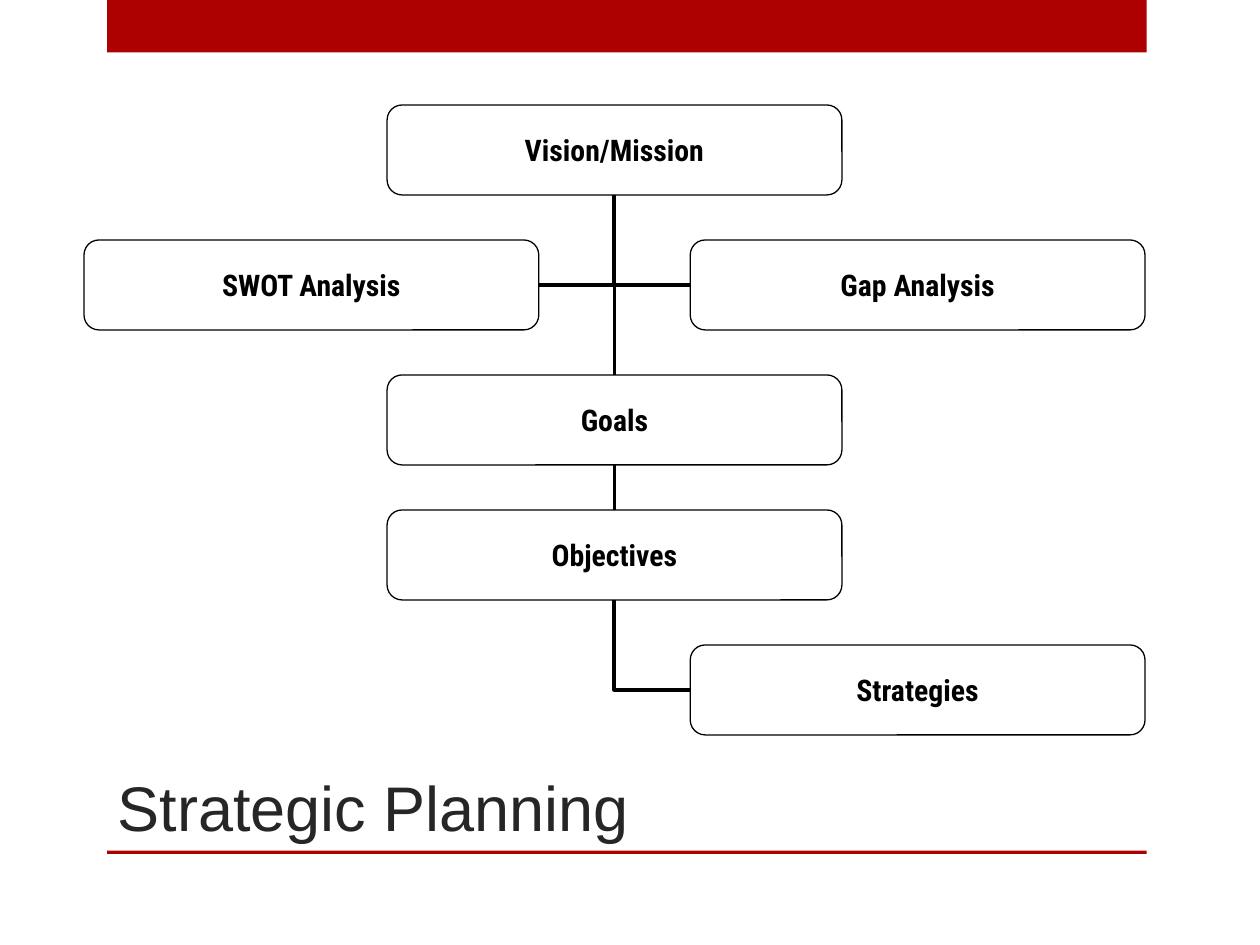
from dataclasses import dataclass

from pptx import Presentation
from pptx.dml.color import RGBColor
from pptx.enum.shapes import MSO_CONNECTOR, MSO_SHAPE
from pptx.enum.text import MSO_ANCHOR, MSO_AUTO_SIZE, PP_ALIGN
from pptx.oxml.ns import qn
from pptx.util import Pt


@dataclass(frozen=True)
class Theme:
    accent: RGBColor = RGBColor(0xAD, 0x01, 0x01)
    title: RGBColor = RGBColor(0x26, 0x26, 0x26)
    ink: RGBColor = RGBColor(0, 0, 0)
    paper: RGBColor = RGBColor(0xFF, 0xFF, 0xFF)
    title_font: str = "Arial"
    box_font: str = "Roboto Condensed"
    title_size: float = 36
    box_size: float = 17
    box_line: float = 0.75
    link_line: float = 2.25


# Connection sites of a rectangle
TOP, LEFT, BOTTOM, RIGHT = range(4)

# Chart grid: columns overlap by half a box, rows are evenly spaced
GRID_LEFT, GRID_TOP = 48, 60
COL_STEP, ROW_STEP = 173.2, 77.14
BOX_W, BOX_H = 259.9, 51.43

BAR_LEFT, BAR_W = 61.2, 594

# name: (column, row)
BOXES = {
    "Vision/Mission": (1, 0),
    "Goals": (1, 2),
    "Objectives": (1, 3),
    "Strategies": (2, 4),
    "SWOT Analysis": (0, 1),
    "Gap Analysis": (2, 1),
}

# (from, site, to, site)
LINKS = [
    ("Gap Analysis", LEFT, "Vision/Mission", BOTTOM),
    ("SWOT Analysis", RIGHT, "Vision/Mission", BOTTOM),
    ("Strategies", LEFT, "Objectives", BOTTOM),
    ("Objectives", TOP, "Goals", BOTTOM),
    ("Goals", TOP, "Vision/Mission", BOTTOM),
]


class SlideBuilder:
    def __init__(self, slide, theme):
        self.slide = slide
        self.theme = theme

    def format_runs(self, p, font, size, color, bold=False):
        for r in p.runs:
            r.font.name = font
            r.font.size = Pt(size)
            r.font.color.rgb = color
            r.font.bold = bold

    def bar(self, top, height):
        sp = self.slide.shapes.add_shape(
            MSO_SHAPE.RECTANGLE, Pt(BAR_LEFT), Pt(top), Pt(BAR_W), Pt(height))
        sp.shadow.inherit = False
        sp.fill.solid()
        sp.fill.fore_color.rgb = self.theme.accent
        sp.line.fill.background()

    def title(self, text):
        sp = self.slide.shapes.title
        sp.left, sp.top, sp.width, sp.height = Pt(60), Pt(432), Pt(BAR_W), Pt(54)
        tf = sp.text_frame
        tf.text = text
        tf.auto_size = MSO_AUTO_SIZE.NONE
        tf.vertical_anchor = MSO_ANCHOR.BOTTOM
        p = tf.paragraphs[0]
        p.alignment = PP_ALIGN.LEFT
        self.format_runs(p, self.theme.title_font, self.theme.title_size,
                         self.theme.title)

    def box(self, text, col, row):
        sp = self.slide.shapes.add_shape(
            MSO_SHAPE.ROUNDED_RECTANGLE,
            Pt(GRID_LEFT + col * COL_STEP), Pt(GRID_TOP + row * ROW_STEP),
            Pt(BOX_W), Pt(BOX_H))
        sp.shadow.inherit = False
        sp.fill.solid()
        sp.fill.fore_color.rgb = self.theme.paper
        sp.line.color.rgb = self.theme.ink
        sp.line.width = Pt(self.theme.box_line)
        tf = sp.text_frame
        tf.text = text
        tf.word_wrap = False
        tf.vertical_anchor = MSO_ANCHOR.MIDDLE
        tf.margin_left = tf.margin_top = tf.margin_right = tf.margin_bottom = 0
        p = tf.paragraphs[0]
        p.alignment = PP_ALIGN.CENTER
        self.format_runs(p, self.theme.box_font, self.theme.box_size,
                         self.theme.ink, bold=True)
        return sp

    def link(self, start, start_site, end, end_site):
        """Join two boxes: straight from a top, with one bend from a side."""
        bent = start_site in (LEFT, RIGHT)
        kind = MSO_CONNECTOR.ELBOW if bent else MSO_CONNECTOR.STRAIGHT
        cn = self.slide.shapes.add_connector(kind, 0, 0, 0, 0)
        cn.begin_connect(start, start_site)
        cn.end_connect(end, end_site)
        cn.line.color.rgb = self.theme.ink
        cn.line.width = Pt(self.theme.link_line)
        sp_pr = cn._element.spPr
        if bent:
            sp_pr.find(qn("a:prstGeom")).set("prst", "bentConnector2")
        sp_pr.append(sp_pr.makeelement(qn("a:effectLst"), {}))


def main():
    prs = Presentation()
    prs.slide_width, prs.slide_height = Pt(720), Pt(540)
    title_only = prs.slide_layouts[5]
    s = SlideBuilder(prs.slides.add_slide(title_only), Theme())

    s.bar(top=0, height=30)
    s.bar(top=486, height=2)
    s.title("Strategic Planning")
    boxes = {name: s.box(name, *cell) for name, cell in BOXES.items()}
    for start, start_site, end, end_site in LINKS:
        s.link(boxes[start], start_site, boxes[end], end_site)

    prs.save("out.pptx")


if __name__ == "__main__":
    main()
